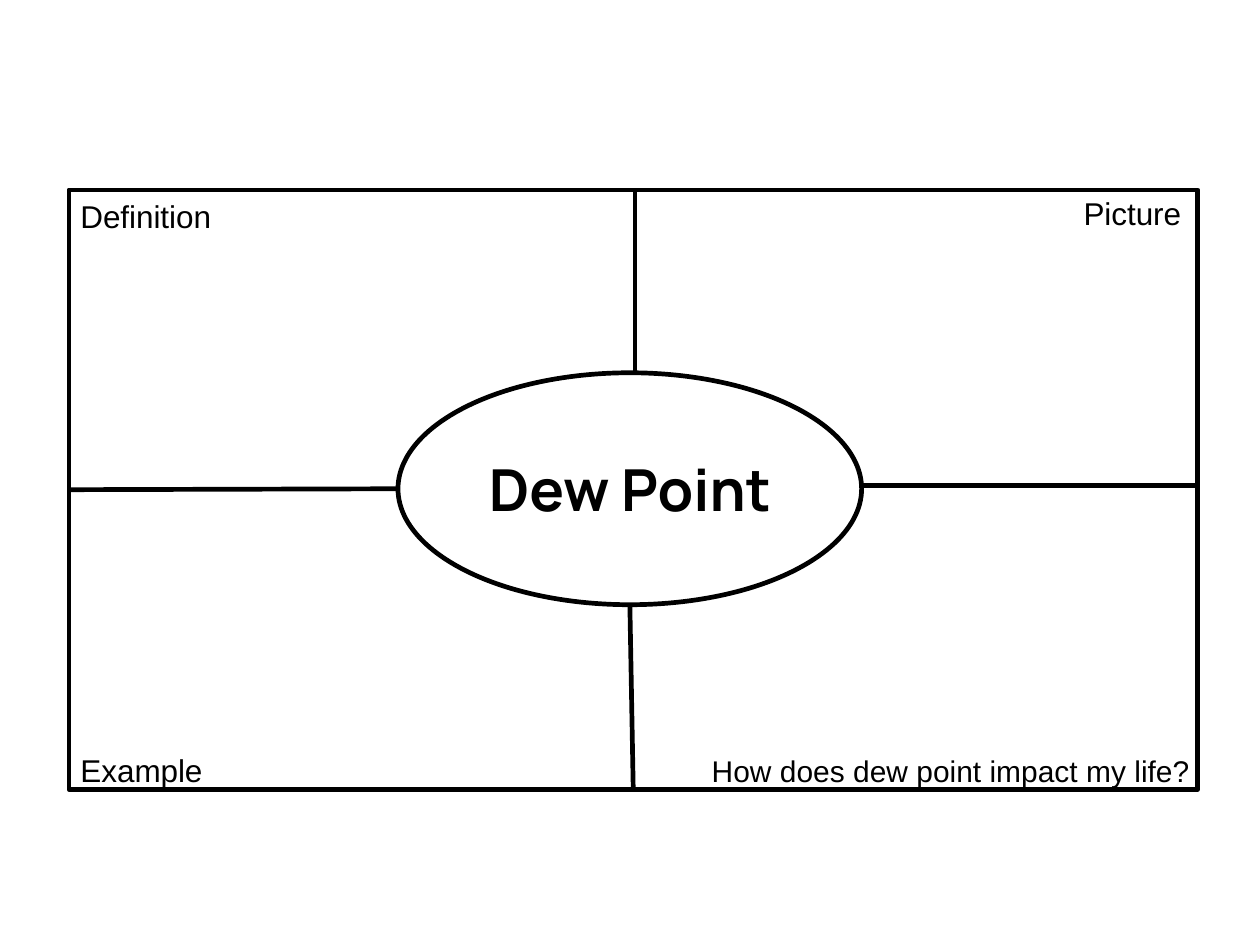
"""Build a four-square vocabulary organizer for the term Dew Point."""
from lxml import etree
from pptx import Presentation
from pptx.dml.color import RGBColor
from pptx.enum.shapes import MSO_CONNECTOR, MSO_SHAPE
from pptx.enum.text import MSO_ANCHOR, MSO_AUTO_SIZE, PP_ALIGN
from pptx.oxml.ns import qn
from pptx.util import Pt

BLACK, WHITE = "000000", "FFFFFF"
LINE_WIDTH = 2
TERM = "Dew Point"
TERM_BOX = (176.4, 191.5, 187.2, 35.3)
FRAME = (29.5, 81.4, 483.8, 257)
OVAL = (170.6, 159.8, 198.7, 99.4)
LABELS = [
    ("Definition", (29.5, 81.4, 67.7, 21.6), 13.5, PP_ALIGN.LEFT),
    ("Example", (29.5, 319, 64.1, 21.6), 13.5, PP_ALIGN.LEFT),
    ("Picture", (459.4, 80.3, 53.3, 21.6), 13.5, PP_ALIGN.LEFT),
    ("How does dew point impact my life?", (276.5, 319.7, 238.3, 20.9), 12.8, PP_ALIGN.RIGHT),
]


def rgb(color):
    return RGBColor.from_string(color)


def points(values):
    return [Pt(v) for v in values]


def style_line(line):
    line.color.rgb = rgb(BLACK)
    line.width = Pt(LINE_WIDTH)


def add_outline(s, kind, box, fill=None):
    sp = s.shapes.add_shape(kind, *points(box))
    sp.shadow.inherit = False
    if fill:
        sp.fill.solid()
        sp.fill.fore_color.rgb = rgb(fill)
    else:
        sp.fill.background()
    style_line(sp.line)
    return sp


def add_divider(s, start, end):
    cx = s.shapes.add_connector(MSO_CONNECTOR.STRAIGHT, *points(start + end))
    style_line(cx.line)
    etree.SubElement(cx.element.spPr, qn("a:effectLst"))
    return cx


def write(sp, text, size, font, align, bold=False):
    tf = sp.text_frame
    tf.text = text
    tf.word_wrap = True
    tf.auto_size = MSO_AUTO_SIZE.SHAPE_TO_FIT_TEXT
    tf.vertical_anchor = MSO_ANCHOR.TOP
    tf.margin_left = tf.margin_right = Pt(5)
    tf.margin_top = tf.margin_bottom = Pt(2.9)
    p = tf.paragraphs[0]
    p.alignment = align
    r = p.runs[0]
    r.font.size = Pt(size)
    r.font.name = font
    r.font.bold = bold
    r.font.color.rgb = rgb(BLACK)


def main():
    prs = Presentation()
    prs.slide_width, prs.slide_height = Pt(540), Pt(405)
    s = prs.slides.add_slide(prs.slide_layouts[5])
    s.background.fill.solid()
    s.background.fill.fore_color.rgb = rgb(WHITE)

    left, top, width, height = FRAME
    right, bottom = left + width, top + height
    oval_left, oval_top, oval_width, oval_height = OVAL
    oval_right, oval_bottom = oval_left + oval_width, oval_top + oval_height
    mid_x, mid_y = oval_left + oval_width / 2, oval_top + oval_height / 2

    frame = add_outline(s, MSO_SHAPE.RECTANGLE, FRAME)
    add_divider(s, (272.2, top), (272.2, oval_top))
    lower = add_divider(s, (mid_x, oval_bottom), (left + width / 2, bottom))
    lower.end_connect(frame, 2)
    west = add_divider(s, (left, mid_y), (oval_left, mid_y))
    west.begin_connect(frame, 1)
    add_divider(s, (oval_right, 208.1), (right, 208.1))
    add_outline(s, MSO_SHAPE.OVAL, OVAL, WHITE)

    title = s.shapes.title
    title.left, title.top, title.width, title.height = points(TERM_BOX)
    write(title, TERM, 24.8, "Manrope", PP_ALIGN.CENTER, bold=True)
    title.element.getparent().append(title.element)

    for text, box, size, align in LABELS:
        write(s.shapes.add_textbox(*points(box)), text, size, "Arial", align)

    prs.save("out.pptx")


if __name__ == "__main__":
    main()
